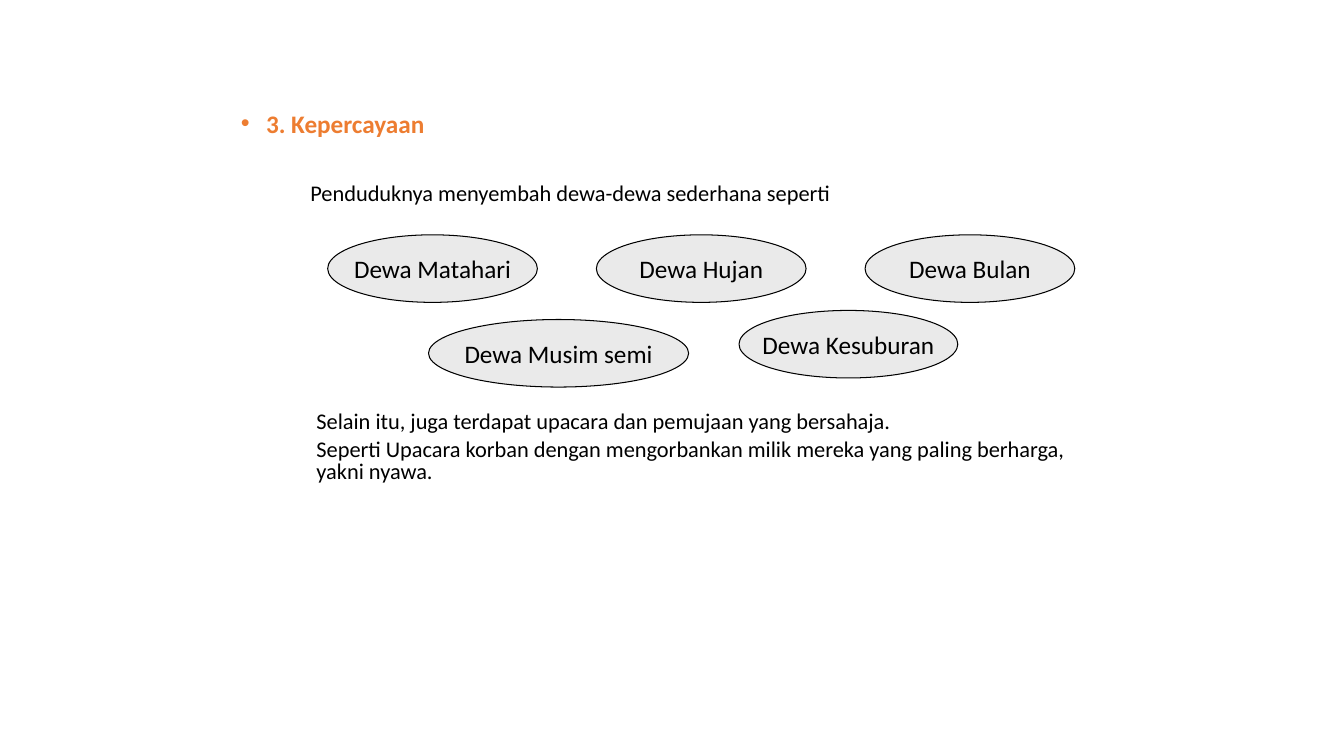
from lxml import etree
from pptx import Presentation
from pptx.dml.color import RGBColor
from pptx.enum.shapes import MSO_SHAPE as Preset
from pptx.enum.text import MSO_ANCHOR as Anchor, PP_ALIGN as Align
from pptx.oxml.ns import qn
from pptx.util import Inches, Pt

COLORS = {"heading": "ED7D31", "ink": "000000", "oval": "EAEAEA"}
FONT = "Calibri"
OVAL_HEIGHT = 0.67

HEADING = "3. Kepercayaan"
STATEMENTS = [
    ("Penduduknya menyembah dewa-dewa sederhana seperti", 0.69, 33),
    ("Selain itu, juga terdapat upacara dan pemujaan yang bersahaja.", 0.75, 147.5),
    ("Seperti Upacara korban dengan mengorbankan milik mereka yang paling berharga, "
     "yakni nyawa.", 0.75, 5),
]
MAIN_GODS = ["Dewa Matahari", "Dewa Hujan", "Dewa Bulan"]
OTHER_GODS = [("Dewa Musim semi", 1, 0.84, 2.58), ("Dewa Kesuburan", 4.08, 0.75, 2.17)]


def rgb(name):
    """Return the named palette colour."""
    return RGBColor.from_string(COLORS[name])


def style(paragraph, size, color, bold=False):
    """Format every run of a paragraph."""
    for run in paragraph.runs:
        run.font.name = FONT
        run.font.size = Pt(size)
        run.font.bold = bold
        run.font.color.rgb = rgb(color)


def set_indent(paragraph, margin, hanging=0):
    """Set the left margin and hanging indent in inches."""
    properties = paragraph._p.get_or_add_pPr()
    properties.set("marL", str(Inches(margin)))
    properties.set("indent", str(Inches(-hanging)))
    return properties


def add_belief_text(slide, left, top, width, height):
    """Write the bulleted heading and the statements around the ovals."""
    frame = slide.shapes.add_textbox(
        Inches(left), Inches(top), Inches(width), Inches(height)).text_frame
    frame.word_wrap = True
    heading = frame.paragraphs[0]
    heading.text = HEADING
    heading.line_spacing = 0.8
    properties = set_indent(heading, 0.25, 0.25)
    etree.SubElement(properties, qn("a:buFont")).set("typeface", "Arial")
    etree.SubElement(properties, qn("a:buChar")).set("char", "•")
    style(heading, 18, "heading", True)
    for words, margin, gap in STATEMENTS:
        statement = frame.add_paragraph()
        statement.text = words
        statement.line_spacing = 0.8
        statement.space_before = Pt(gap)
        set_indent(statement, margin)
        style(statement, 16, "ink")


def add_god(slide, name, left, top, width):
    """Draw one oval with the name of a god."""
    oval = slide.shapes.add_shape(
        Preset.OVAL, Inches(left), Inches(top), Inches(width), Inches(OVAL_HEIGHT))
    oval.shadow.inherit = False
    oval.fill.solid()
    oval.fill.fore_color.rgb = rgb("oval")
    oval.line.color.rgb = rgb("ink")
    oval.line.width = Pt(0.75)
    frame = oval.text_frame
    frame.text = name
    frame.word_wrap = False
    frame.vertical_anchor = Anchor.MIDDLE
    frame.paragraphs[0].alignment = Align.CENTER
    style(frame.paragraphs[0], 18, "ink")


def add_gods(slide, left, top, width):
    """Spread the main gods evenly and set the others below them."""
    oval_width = 2.08
    step = (width - oval_width) / (len(MAIN_GODS) - 1)
    for column, name in enumerate(MAIN_GODS):
        add_god(slide, name, left + column * step, top, oval_width)
    for name, across, down, other_width in OTHER_GODS:
        add_god(slide, name, left + across, top + down, other_width)


def main():
    """Build and save the slide."""
    deck = Presentation()
    deck.slide_width, deck.slide_height = Inches(13.33), Inches(7.5)
    slide = deck.slides.add_slide(deck.slide_layouts[6])
    add_belief_text(slide, 2.29, 1.08, 8.75, 5.5)
    add_gods(slide, 3.25, 2.33, 7.41)
    deck.save("out.pptx")


if __name__ == "__main__":
    main()
